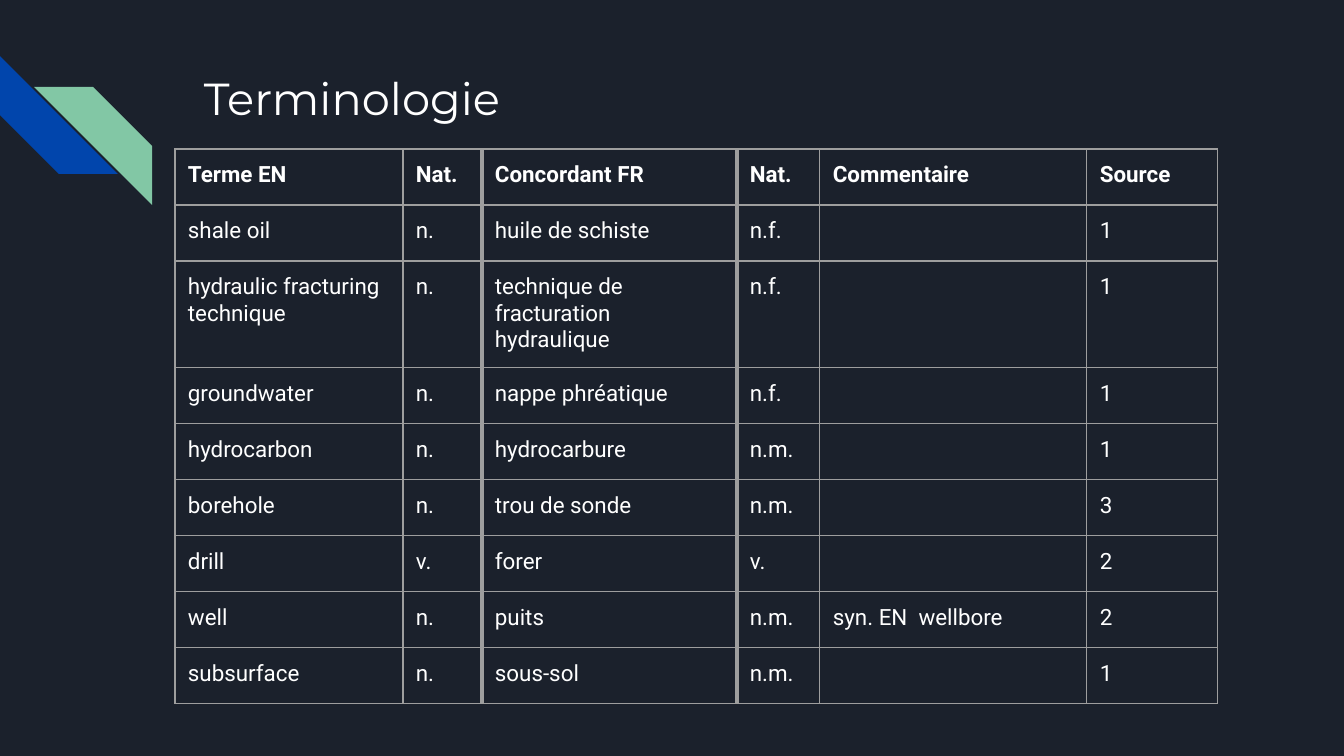
import pptx
import pptx.dml.color
import pptx.enum.shapes
import pptx.oxml
import pptx.oxml.ns
import pptx.util

EMU_PER_PX = 914400 / 134.4
SLIDE_SIZE = (1344, 756)
INSET = 13
BACKGROUND, TEXT, GRID = "1B212C", "FFFFFF", "9E9E9E"
THIN, THICK = 0.75, 2.25

TITLE = "Terminologie"
TITLE_BOX = (191, 58, 403, 79)
TITLE_FORMAT = {"name": "Montserrat", "size": pptx.util.Pt(24), "bold": False}

# left, top, side, rotation, colour
STRIPES = [
    (0, 56, 118, 270, "0145AC"),
    (34, 87, 118, 90, "82C7A5"),
]

TERMS = [
    ("Terme EN", "Nat.", "Concordant FR", "Nat.", "Commentaire", "Source"),
    ("shale oil", "n.", "huile de schiste", "n.f.", "", "1"),
    ("hydraulic fracturing technique", "n.",
     "technique de fracturation hydraulique", "n.f.", "", "1"),
    ("groundwater", "n.", "nappe phréatique", "n.f.", "", "1"),
    ("hydrocarbon", "n.", "hydrocarbure", "n.m.", "", "1"),
    ("borehole", "n.", "trou de sonde", "n.m.", "", "3"),
    ("drill", "v.", "forer", "v.", "", "2"),
    ("well", "n.", "puits", "n.m.", "syn. EN  wellbore", "2"),
    ("subsurface", "n.", "sous-sol", "n.m.", "", "1"),
]
TABLE_LEFT, TABLE_TOP, ROW_HEIGHT = 175, 149, 56
COLUMN_WIDTHS = [228, 79, 255, 83, 267, 131]
# Vertical rules around the French term, counted from the table's left edge
THICK_RULES = {2, 3}
TERM_FORMAT = {"name": "Roboto", "size": pptx.util.Pt(12)}
MARGINS = ("margin_left", "margin_top", "margin_right", "margin_bottom")


def px(length):
    return pptx.util.Emu(round(length * EMU_PER_PX))


def rgb(colour):
    return pptx.dml.color.RGBColor.from_string(colour)


def paint(fill, colour):
    fill.solid()
    fill.fore_color.rgb = rgb(colour)


def set_margins(holder):
    for margin in MARGINS:
        setattr(holder, margin, px(INSET))


def write(paragraph, text, text_format):
    run = paragraph.add_run()
    run.text = text
    for attribute, value in text_format.items():
        setattr(run.font, attribute, value)
    run.font.color.rgb = rgb(TEXT)


def add_border(cell, side, points):
    """Draw one side (L, R, T or B) of a table cell."""
    cell._tc.get_or_add_tcPr().append(pptx.oxml.parse_xml(
        f'<a:ln{side} {pptx.oxml.ns.nsdecls("a")} w="{pptx.util.Pt(points)}">'
        f'<a:solidFill><a:srgbClr val="{GRID}"/></a:solidFill>'
        f'<a:prstDash val="solid"/></a:ln{side}>'))


def keep_empty_line_small(paragraph):
    """Give an empty cell the term size, so that it does not stretch its row."""
    size = TERM_FORMAT["size"].centipoints
    paragraph._p.append(pptx.oxml.parse_xml(
        f'<a:endParaRPr {pptx.oxml.ns.nsdecls("a")} sz="{size}"/>'))


def add_stripes(slide):
    for left, top, side, rotation, colour in STRIPES:
        stripe = slide.shapes.add_shape(
            pptx.enum.shapes.MSO_SHAPE.DIAGONAL_STRIPE,
            px(left), px(top), px(side), px(side))
        stripe.adjustments[0] = 0.5
        stripe.rotation = rotation
        stripe.shadow.inherit = False
        stripe.line.fill.background()
        paint(stripe.fill, colour)


def add_title(slide):
    frame = slide.shapes.add_textbox(*map(px, TITLE_BOX)).text_frame
    frame.word_wrap = True
    set_margins(frame)
    write(frame.paragraphs[0], TITLE, TITLE_FORMAT)


def add_terms(slide):
    table = slide.shapes.add_table(
        len(TERMS), len(COLUMN_WIDTHS), px(TABLE_LEFT), px(TABLE_TOP),
        px(sum(COLUMN_WIDTHS)), px(ROW_HEIGHT * len(TERMS))).table
    table.first_row = table.horz_banding = False
    for column, width in zip(table.columns, COLUMN_WIDTHS):
        column.width = px(width)
    for r, term in enumerate(TERMS):
        table.rows[r].height = px(ROW_HEIGHT)
        for c, text in enumerate(term):
            cell = table.cell(r, c)
            set_margins(cell)
            for side, rule in (("L", c), ("R", c + 1)):
                add_border(cell, side, THICK if rule in THICK_RULES else THIN)
            for side in "TB":
                add_border(cell, side, THIN)
            cell.fill.background()
            paragraph = cell.text_frame.paragraphs[0]
            if text:
                write(paragraph, text, {**TERM_FORMAT, "bold": r == 0})
            else:
                keep_empty_line_small(paragraph)


def main():
    deck = pptx.Presentation()
    deck.slide_width, deck.slide_height = map(px, SLIDE_SIZE)
    slide = deck.slides.add_slide(deck.slide_layouts[6])
    paint(slide.background.fill, BACKGROUND)
    add_stripes(slide)
    add_title(slide)
    add_terms(slide)
    deck.save("out.pptx")


if __name__ == "__main__":
    main()
